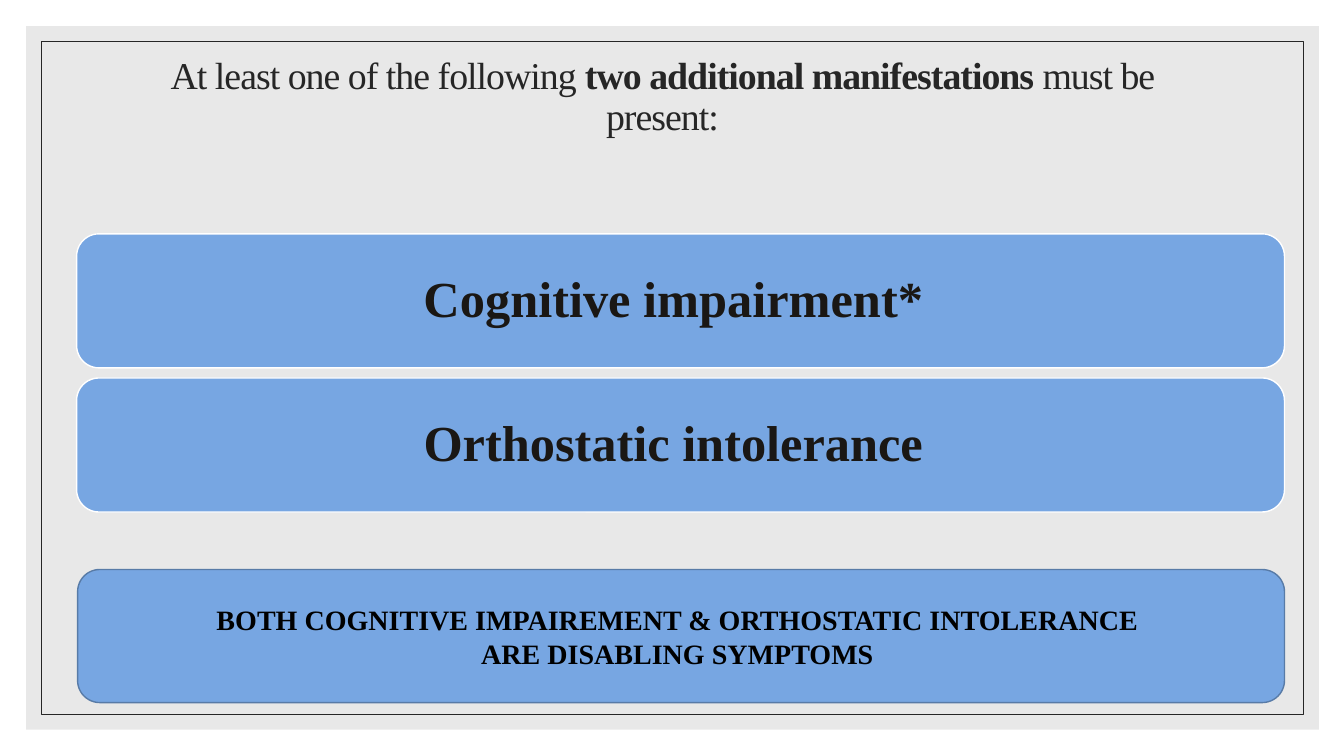
from lxml.etree import SubElement
from pptx import Presentation
from pptx.dml.color import RGBColor
from pptx.enum.shapes import MSO_SHAPE as Shape
from pptx.enum.text import MSO_ANCHOR as Anchor, MSO_AUTO_SIZE as AutoSize, PP_ALIGN as Align
from pptx.oxml.ns import qn
from pptx.util import Inches, Pt

FONT = "Times New Roman"
INK = "262626"
PILL_BLUE = "77A6E2"


def rgb(hex_color):
    return RGBColor.from_string(hex_color)


class SlideBuilder:
    """Holds the current slide and draws its elements in one style."""

    def __init__(self, presentation):
        self.slide = presentation.slides.add_slide(presentation.slide_layouts[5])
        background = self.slide.background.fill
        background.solid()
        background.fore_color.rgb = rgb("FFFFFF")

    def shape(self, kind, box, fill=None, line=None, width=1.0):
        shape = self.slide.shapes.add_shape(kind, *map(Inches, box))
        shape.shadow.inherit = False
        if fill:
            shape.fill.solid()
            shape.fill.fore_color.rgb = rgb(fill)
        else:
            shape.fill.background()
        if line:
            shape.line.color.rgb = rgb(line)
            shape.line.width = Pt(width)
        else:
            shape.line.fill.background()
        return shape

    def panel(self, box, fill, opacity):
        """Draw a borderless, partly transparent rectangle."""
        panel = self.shape(Shape.RECTANGLE, box, fill)
        color = panel.fill._xPr.find(qn("a:solidFill"))[0]
        SubElement(color, qn("a:alpha")).set("val", str(opacity * 1000))

    def title(self, box, runs):
        """Format the title placeholder from (text, bold) runs."""
        title = self.slide.shapes.title
        self.slide.shapes._spTree.append(title._element)  # above the panels
        title.left, title.top, title.width, title.height = map(Inches, box)
        frame = title.text_frame
        frame.word_wrap = True
        frame.auto_size = AutoSize.NONE
        frame.vertical_anchor = Anchor.MIDDLE
        frame.margin_bottom = Inches(0.5)
        paragraph = frame.paragraphs[0]
        paragraph.alignment = Align.CENTER
        paragraph.line_spacing = 0.9
        for text, bold in runs:
            run = paragraph.add_run()
            run.text = text
            run.font.name = FONT
            run.font.size = Pt(27)
            run.font.bold = bold
            run.font.color.rgb = rgb(INK)
            run._r.get_or_add_rPr().set("spc", "-70")

    def pill(self, box, lines, size, color, border, right_margin, spacing=1.0):
        """Draw a rounded box with bold centred lines."""
        pill = self.shape(Shape.ROUNDED_RECTANGLE, box, PILL_BLUE, border)
        frame = pill.text_frame
        frame.word_wrap = True
        frame.vertical_anchor = Anchor.MIDDLE
        frame.margin_right = Inches(right_margin)
        for index, text in enumerate(lines):
            paragraph = frame.add_paragraph() if index else frame.paragraphs[0]
            paragraph.text = text
            paragraph.alignment = Align.CENTER
            paragraph.line_spacing = spacing
            paragraph.font.name = FONT
            paragraph.font.size = Pt(size)
            paragraph.font.bold = True
            paragraph.font.color.rgb = rgb(color)


def main():
    presentation = Presentation()
    presentation.slide_width = Inches(13.33)
    presentation.slide_height = Inches(7.5)
    builder = SlideBuilder(presentation)

    builder.panel((0.26, 0.26, 12.82, 6.98), "D9D9D9", 60)
    builder.shape(Shape.RECTANGLE, (0.41, 0.41, 12.52, 6.68), line=INK, width=0.5)
    builder.title((1.12, 0.63, 10.9, 1.13), [
        ("At least one of the following ", False),
        ("two additional manifestations", True),
        (" must be present:", False),
    ])

    manifestations = ["Cognitive impairment*", "Orthostatic intolerance"]
    for row, manifestation in enumerate(manifestations):
        builder.pill((0.76, 2.32 + row * 1.43, 11.98, 1.33), [manifestation],
                     36, "1A1714", "FFFFFF", right_margin=0.24, spacing=0.9)

    conclusion = ["BOTH COGNITIVE IMPAIREMENT & ORTHOSTATIC INTOLERANCE",
                  "ARE DISABLING SYMPTOMS"]
    builder.pill((0.77, 5.65, 11.97, 1.32), conclusion,
                 20, "000000", "587BA7", right_margin=0.17)

    presentation.save("out.pptx")


if __name__ == "__main__":
    main()
